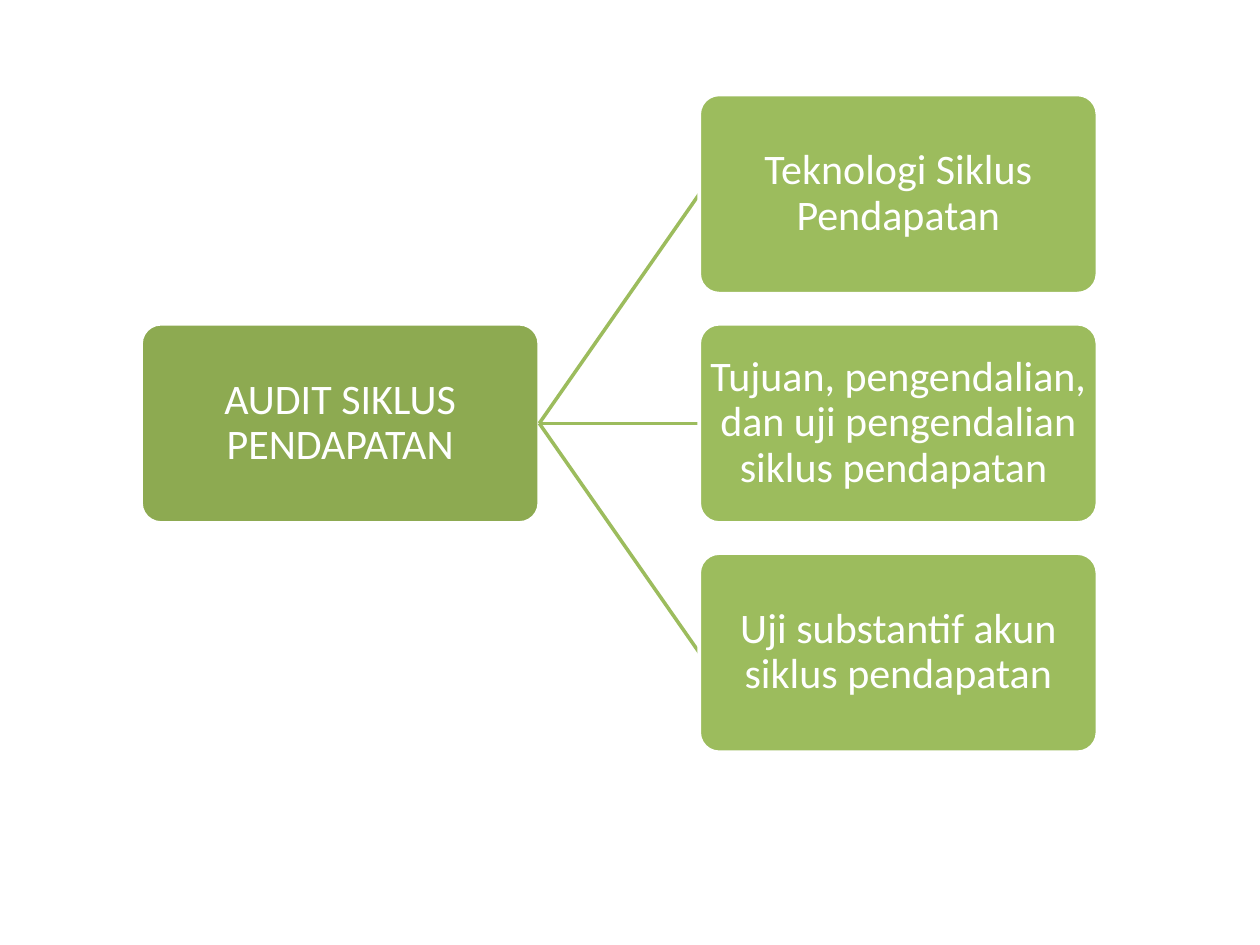
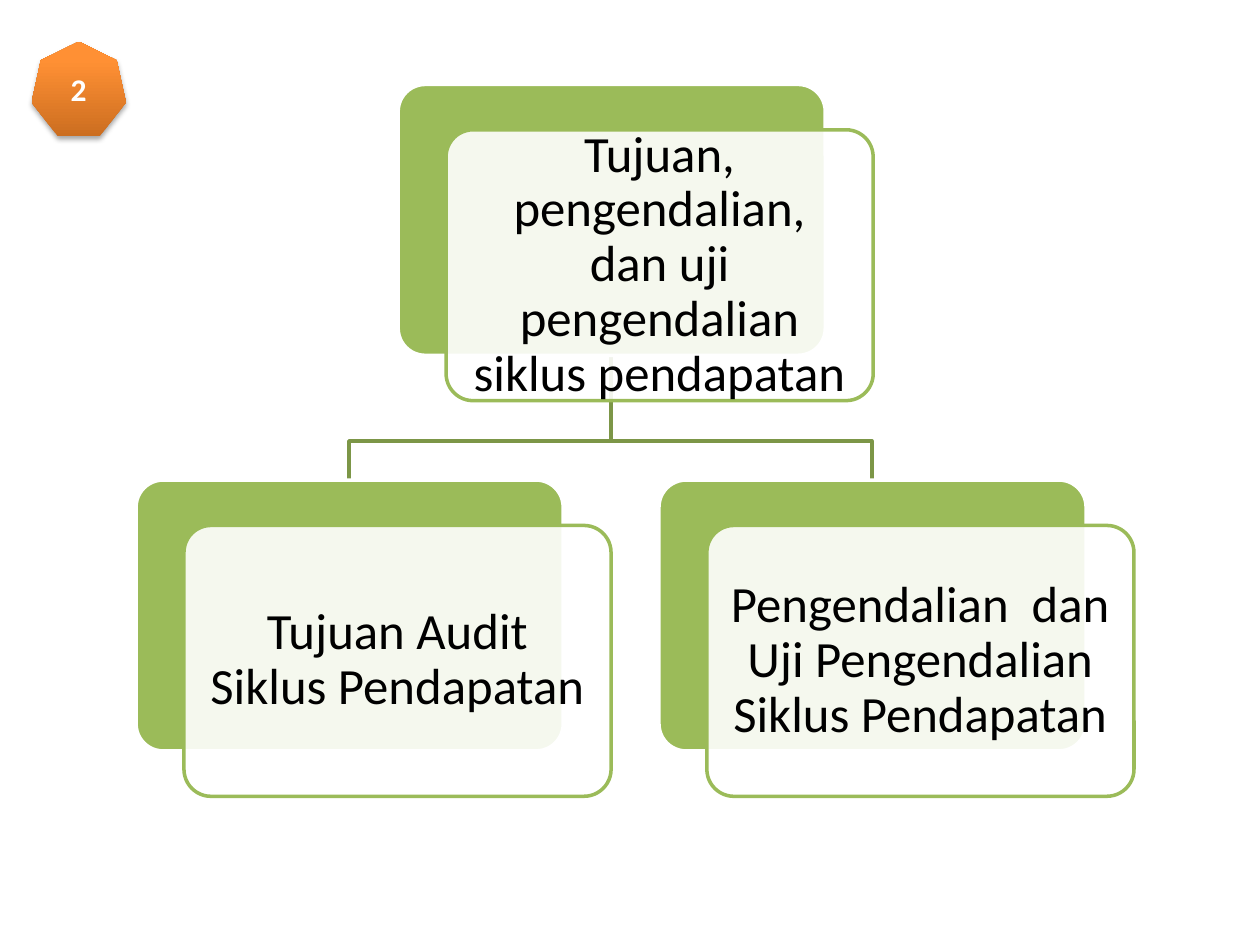
from copy import deepcopy
from dataclasses import dataclass

from lxml import etree
from pptx import Presentation
from pptx import util as u
from pptx.dml.color import RGBColor
from pptx.enum import shapes, text
from pptx.oxml.ns import qn

PX = 9144  # 100 px to the inch
FONT = "Calibri"
WHITE, BLACK = "FFFFFF", "000000"
ROOT_GREEN, LEAF_GREEN = "8DAA51", "9CBC5D"
CARD_GREEN, BRANCH_GREEN = "9BBB59", "7C9647"
BADGE_STOPS = [(0, "CC6E20"), (0.8, "FF9034"), (1, "FF9136")]


@dataclass(frozen=True)
class Box:
    x: int
    y: int
    w: int
    h: int

    @property
    def cx(self) -> int:
        return self.x + self.w // 2

    @property
    def cy(self) -> int:
        return self.y + self.h // 2

    def moved(self, dx: int, dy: int) -> "Box":
        return Box(self.x + dx, self.y + dy, self.w, self.h)


@dataclass(frozen=True)
class Label:
    words: str
    size: int
    color: str
    inset: int
    bold: bool = False
    spacing: float = 0.9


def px(n: int) -> int:
    return n * PX


def rgb(value: str) -> RGBColor:
    return RGBColor.from_string(value)


def set_line(sp, color: str) -> None:
    sp.line.color.rgb = rgb(color)
    sp.line.width = u.Pt(2)


def add_shape(s, kind, box: Box):
    sp = s.shapes.add_shape(kind, px(box.x), px(box.y), px(box.w), px(box.h))
    sp.shadow.inherit = False
    return sp


def write(sp, label: Label) -> None:
    tf = sp.text_frame
    tf.text = label.words
    tf.word_wrap = True
    tf.vertical_anchor = text.MSO_ANCHOR.MIDDLE
    tf.margin_left = tf.margin_right = px(label.inset)
    tf.margin_top = tf.margin_bottom = px(label.inset)
    p = tf.paragraphs[0]
    p.alignment = text.PP_ALIGN.CENTER
    p.line_spacing = label.spacing
    r = p.runs[0]
    r.font.name = FONT
    r.font.size = u.Pt(label.size)
    r.font.bold = label.bold
    r.font.color.rgb = rgb(label.color)


def add_card(s, box: Box, fill: str, line: str, alpha: int = 100):
    sp = add_shape(s, shapes.MSO_SHAPE.ROUNDED_RECTANGLE, box)
    sp.adjustments[0] = 0.1
    sp.fill.solid()
    sp.fill.fore_color.rgb = rgb(fill)
    if alpha < 100:
        clr = sp._element.spPr.find(qn("a:solidFill"))[0]
        etree.SubElement(clr, qn("a:alpha"), val=str(alpha * 1000))
    set_line(sp, line)
    return sp


def add_link(s, start: Box, end: Box) -> None:
    """Straight line from the right side of one box to the left of another."""
    c = s.shapes.add_connector(
        shapes.MSO_CONNECTOR.STRAIGHT,
        px(start.x + start.w), px(start.cy), px(end.x), px(end.cy))
    set_line(c, LEAF_GREEN)
    etree.SubElement(c._element.spPr, qn("a:effectLst"))


def add_branch(s, parent: Box, child: Box, bend_y: int) -> None:
    """Elbow line from the bottom of one box to the top of another."""
    points = [(parent.cx, bend_y), (child.cx, bend_y), (child.cx, child.y)]
    fb = s.shapes.build_freeform(px(parent.cx), px(parent.y + parent.h))
    fb.add_line_segments([(px(x), px(y)) for x, y in points], close=False)
    sp = fb.convert_to_shape()
    sp.shadow.inherit = False
    sp.fill.background()
    set_line(sp, BRANCH_GREEN)


def add_layered_card(s, back: Box, words: str) -> None:
    """Green card with a translucent text panel shifted over it."""
    add_card(s, back, CARD_GREEN, WHITE)
    panel = add_card(s, back.moved(38, 36), WHITE, CARD_GREEN, alpha=90)
    write(panel, Label(words, 29, BLACK, inset=12))


def add_badge(s, box: Box, number: str) -> None:
    sp = add_shape(s, shapes.MSO_SHAPE.HEPTAGON, box)
    sp.line.fill.background()
    # Three-stop gradient, dark at the bottom
    sp.fill.gradient()
    sp.fill.gradient_angle = 90
    stops = sp._element.spPr.find(qn("a:gradFill")).find(qn("a:gsLst"))
    stops.append(deepcopy(stops[-1]))
    for stop, (position, color) in zip(sp.fill.gradient_stops, BADGE_STOPS):
        stop.position = position
        stop.color.rgb = rgb(color)
    # Soft shadow below
    effects = sp._element.spPr.find(qn("a:effectLst"))
    shadow = etree.SubElement(
        effects, qn("a:outerShdw"), blurRad=str(u.Pt(3.1)),
        dist=str(u.Pt(1.8)), dir="5400000", rotWithShape="0")
    clr = etree.SubElement(shadow, qn("a:srgbClr"), val=BLACK)
    etree.SubElement(clr, qn("a:alpha"), val="35000")
    write(sp, Label(number, 18, WHITE, inset=5, bold=True, spacing=1.0))


def build_overview(s) -> None:
    root = Box(112, 257, 316, 158)
    topics = [
        "Teknologi Siklus Pendapatan",
        "Tujuan, pengendalian, dan uji pengendalian siklus pendapatan ",
        "Uji substantif akun siklus pendapatan",
    ]
    write(add_card(s, root, ROOT_GREEN, WHITE),
          Label("AUDIT SIKLUS PENDAPATAN", 24, WHITE, inset=2))
    for i, topic in enumerate(topics):
        leaf = root.moved(443, (i - 1) * 182)
        add_link(s, root, leaf)
        write(add_card(s, leaf, LEAF_GREEN, WHITE),
              Label(topic, 24, WHITE, inset=2))


def build_hierarchy(s) -> None:
    add_badge(s, Box(25, 33, 75, 75), "2")
    parent = Box(316, 67, 339, 215)
    left, right = parent.moved(-208, 314), parent.moved(207, 314)
    for child in (right, left):
        add_branch(s, parent, child, bend_y=350)
    add_layered_card(
        s, parent,
        "Tujuan, pengendalian, dan uji pengendalian siklus pendapatan ")
    add_layered_card(s, left, "Tujuan Audit Siklus Pendapatan")
    add_layered_card(
        s, right, "Pengendalian  dan Uji Pengendalian Siklus Pendapatan")


def main() -> None:
    prs = Presentation()
    prs.slide_width, prs.slide_height = px(1000), px(750)
    blank = prs.slide_layouts[6]
    for build in (build_overview, build_hierarchy):
        build(prs.slides.add_slide(blank))
    prs.save("out.pptx")


if __name__ == "__main__":
    main()
